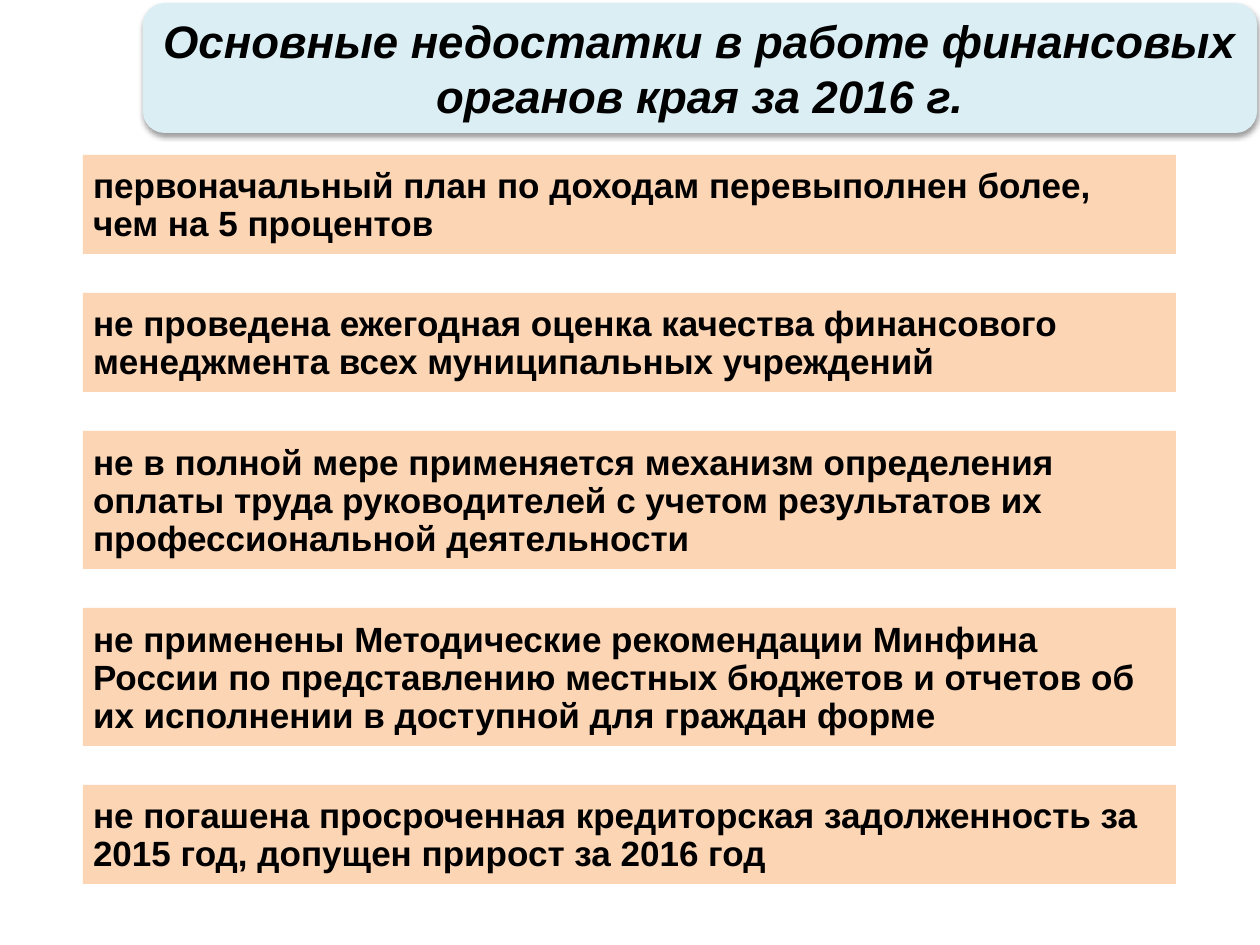
import pptx
import pptx.dml.color
import pptx.enum.shapes
import pptx.enum.text
import pptx.oxml.ns
import pptx.util
from lxml import etree

COLOURS = {"title": "DBEEF4", "card": "FCD5B5", "text": "000000", "shadow": "000000"}

TITLE = "Основные недостатки в работе финансовых органов края за 2016 г."

# Card height in px and wording, from top to bottom
CARDS = [
    (99, "первоначальный план по доходам перевыполнен более, чем на 5 процентов"),
    (99, "не проведена ежегодная оценка качества финансового менеджмента "
         "всех муниципальных учреждений"),
    (138, "не в полной мере применяется механизм определения оплаты труда "
          "руководителей с учетом результатов их профессиональной деятельности"),
    (138, "не применены Методические рекомендации Минфина России по представлению "
          "местных бюджетов и отчетов об их исполнении в доступной для граждан форме"),
    (99, "не погашена просроченная кредиторская задолженность за 2015 год, "
         "допущен прирост за 2016 год"),
]
CARD_LEFT, CARD_TOP, CARD_WIDTH, CARD_GAP = 83, 155, 1093, 39


def px(length):
    return pptx.util.Emu(round(length * 914400 / 126))


def colour(name):
    return pptx.dml.color.RGBColor.from_string(COLOURS[name])


class SlideBuilder:
    font_name = "Arial"

    def __init__(self, page):
        self.page = page

    def panel(self, kind, area, fill):
        box = self.page.shapes.add_shape(kind, *map(px, area))
        box.shadow.inherit = False
        box.fill.solid()
        box.fill.fore_color.rgb = colour(fill)
        box.line.fill.background()
        return box

    def add_shadow(self, box):
        """Give the box a soft shadow straight below it."""
        effects = box._element.spPr.find(pptx.oxml.ns.qn("a:effectLst"))
        effects.append(etree.fromstring(
            f'<a:outerShdw {pptx.oxml.ns.nsdecls("a")} blurRad="39400" dist="20300" '
            f'dir="5400000" rotWithShape="0"><a:srgbClr val="{COLOURS["shadow"]}">'
            '<a:alpha val="38000"/></a:srgbClr></a:outerShdw>'))

    def set_text(self, box, text, size, align, anchor, inset, spacing=1.0, italic=False):
        frame = box.text_frame
        frame.word_wrap = True
        frame.auto_size = pptx.enum.text.MSO_AUTO_SIZE.NONE
        frame.vertical_anchor = anchor
        frame.margin_left = frame.margin_right = px(inset)
        frame.margin_top = frame.margin_bottom = px(inset)
        para = frame.paragraphs[0]
        para.text = text
        para.alignment = align
        para.line_spacing = spacing
        para.font.name = self.font_name
        para.font.size = pptx.util.Pt(size)
        para.font.bold = True
        para.font.italic = italic
        para.font.color.rgb = colour("text")

    def title(self, text, area):
        panel = self.panel(pptx.enum.shapes.MSO_SHAPE.ROUNDED_RECTANGLE, area, "title")
        self.add_shadow(panel)
        box = self.page.shapes.title
        box.left, box.top, box.width, box.height = map(px, area)
        panel._element.addnext(box._element)  # the title stands in front of its panel
        self.set_text(box, text, 26, pptx.enum.text.PP_ALIGN.CENTER,
                      pptx.enum.text.MSO_ANCHOR.MIDDLE, inset=0, italic=True)

    def card(self, text, area):
        box = self.panel(pptx.enum.shapes.MSO_SHAPE.RECTANGLE, area, "card")
        self.set_text(box, text, 20, pptx.enum.text.PP_ALIGN.LEFT,
                      pptx.enum.text.MSO_ANCHOR.BOTTOM, inset=10, spacing=0.9)


def main():
    deck = pptx.Presentation()
    deck.slide_width, deck.slide_height = px(1260), px(945)
    builder = SlideBuilder(deck.slides.add_slide(deck.slide_layouts[5]))
    builder.title(TITLE, (143, 3, 1114, 130))
    top = CARD_TOP
    for height, text in CARDS:
        builder.card(text, (CARD_LEFT, top, CARD_WIDTH, height))
        top += height + CARD_GAP
    deck.save("out.pptx")


if __name__ == "__main__":
    main()
